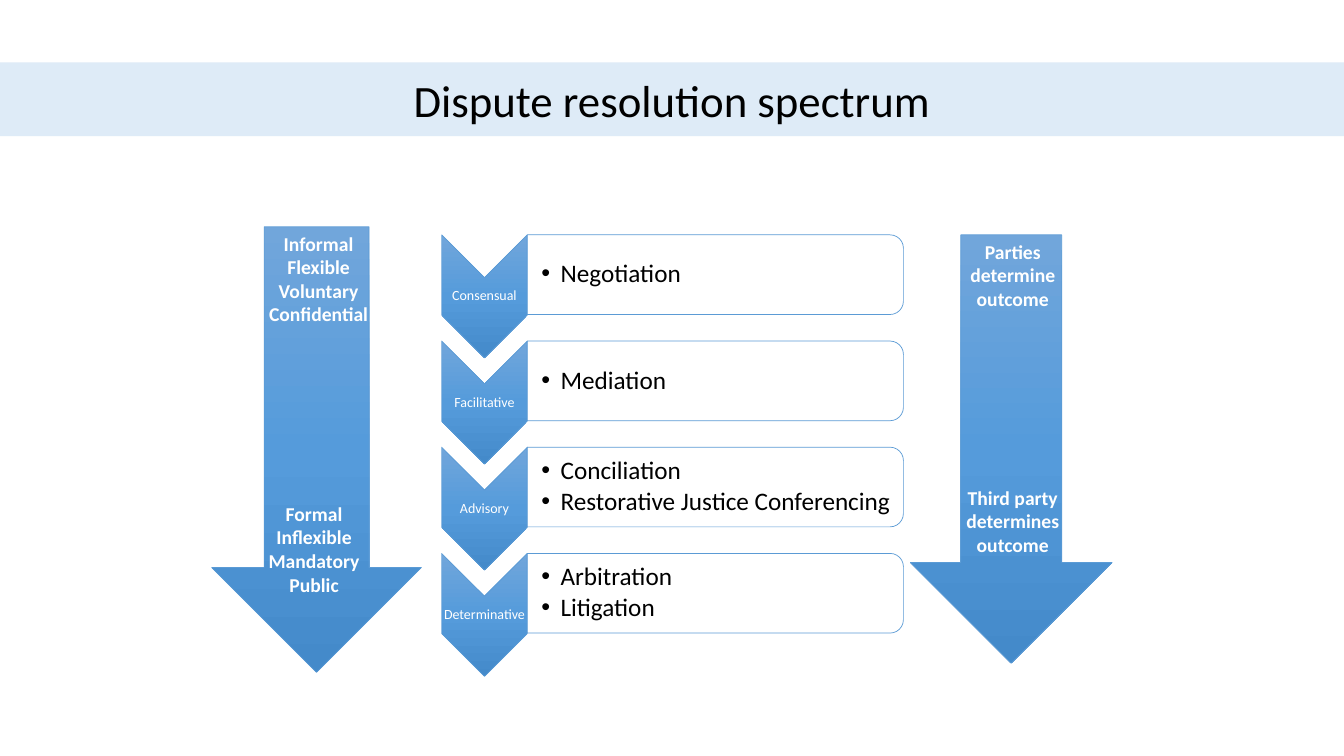
from dataclasses import dataclass

from lxml import etree
from pptx import Presentation
from pptx.dml.color import RGBColor
from pptx.enum.shapes import MSO_SHAPE as Preset
from pptx.enum.text import MSO_ANCHOR as Anchor, PP_ALIGN as Align
from pptx.oxml import parse_xml
from pptx.oxml.ns import nsdecls, qn
from pptx.util import Inches, Pt


@dataclass(frozen=True)
class Theme:
    font: str = "Calibri"
    black: str = "000000"
    white: str = "FFFFFF"
    band: str = "DEEBF7"
    edge: str = "5B9BD5"
    gradient: tuple = ((0, "71A6DB"), (50, "559BDB"), (100, "448ACA"))
    title: int = 32
    item: int = 18
    caption: int = 14
    stage: int = 10
    edge_width: float = 0.5


THEME = Theme()
STAGES = [
    ("Consensual", ["Negotiation"]),
    ("Facilitative", ["Mediation"]),
    ("Advisory", ["Conciliation", "Restorative Justice Conferencing"]),
    ("Determinative", ["Arbitration", "Litigation"]),
]
ARROWS = [
    ((2.1, 2.25, 2.08, 4.42), [
        ((0.39, 0, 1.34, 1.04), ["Informal", "Flexible", "Voluntary", "Confidential"]),
        ((0.39, 2.68, 1.25, 1.04), ["Formal", "Inflexible", "Mandatory", "Public"]),
    ]),
    ((9.03, 2.33, 2, 4.25), [
        ((0.39, 0, 1.25, 0.81), ["Parties determine outcome"]),
        ((0.39, 2.44, 1.25, 0.81), ["Third party determines outcome"]),
    ]),
]


def add_preset(shapes, preset, box, fill=None, edge=None):
    shape = shapes.add_shape(preset, *map(Inches, box))
    shape.shadow.inherit = False
    if fill:
        shape.fill.solid()
        shape.fill.fore_color.rgb = RGBColor.from_string(fill)
    if edge:
        shape.line.color.rgb = RGBColor.from_string(edge)
        shape.line.width = Pt(THEME.edge_width)
    else:
        shape.line.fill.background()
    return shape


def add_turned(shapes, preset, box, fill=None):
    left, top, width, height = box
    shift = (width - height) / 2
    turned = (left + shift, top - shift, height, width)
    shape = add_preset(shapes, preset, turned, fill, THEME.edge)
    shape.rotation = 90
    return shape


def shade(shape):
    stops = "".join(
        f'<a:gs pos="{place * 1000}"><a:srgbClr val="{color}"/></a:gs>'
        for place, color in THEME.gradient)
    shape.fill.background()
    empty = shape._element.spPr.find(qn("a:noFill"))
    empty.getparent().replace(empty, parse_xml(
        f'<a:gradFill {nsdecls("a")} rotWithShape="0"><a:gsLst>{stops}</a:gsLst>'
        '<a:lin ang="5400000" scaled="0"/></a:gradFill>'))


def write(shape, lines, size, color, align=Align.CENTER, bold=False,
          anchor=Anchor.TOP, insets=None, spacing=None, after=None, bullet=False):
    frame = shape.text_frame
    frame.word_wrap = True
    frame.vertical_anchor = anchor
    if insets:
        (frame.margin_left, frame.margin_top,
         frame.margin_right, frame.margin_bottom) = map(Inches, insets)
    for index, line in enumerate(lines):
        para = frame.add_paragraph() if index else frame.paragraphs[0]
        para.alignment = align
        if spacing:
            para.line_spacing = spacing
            para.space_after = Pt(after)
        if bullet:
            props = para._p.get_or_add_pPr()
            props.set("marL", str(Inches(0.19)))
            props.set("indent", str(-Inches(0.19)))
            etree.SubElement(props, qn("a:buFont"), typeface="Arial")
            etree.SubElement(props, qn("a:buChar"), char="•")
        span = para.add_run()
        span.text = line
        span.font.name = THEME.font
        span.font.size = Pt(size)
        span.font.bold = bold
        span.font.color.rgb = RGBColor.from_string(color)


def add_title(page, box):
    band = add_preset(page.shapes, Preset.RECTANGLE, box, THEME.band)
    write(band, ["Dispute resolution spectrum"], THEME.title, THEME.black,
          anchor=Anchor.MIDDLE)


def add_stage(shapes, box, name, methods):
    left, top, width, height = box
    tab, panel = 0.85, 0.79
    chevron = add_turned(shapes, Preset.CHEVRON, (left, top, tab, height))
    shade(chevron)
    label = shapes.add_textbox(*map(Inches, (left, top + 0.43, tab, 0.36)))
    write(label, [name], THEME.stage, THEME.white, anchor=Anchor.MIDDLE,
          insets=(0.01,) * 4, spacing=0.9, after=3.5)

    body = add_turned(shapes, Preset.ROUND_2_SAME_RECTANGLE,
                      (left + tab, top, width - tab, panel), THEME.white)
    color = body._element.spPr.find(qn("a:solidFill"))[0]
    etree.SubElement(color, qn("a:alpha"), val="90000")
    text = shapes.add_textbox(*map(Inches, (
        left + tab, top + 0.04, width - tab - 0.04, panel - 0.08)))
    write(text, methods, THEME.item, THEME.black, Align.LEFT,
          anchor=Anchor.MIDDLE, insets=(0.14, 0.01, 0.01, 0.01),
          spacing=0.9, after=2.7, bullet=True)


def add_spectrum(page, box):
    left, top, width, height = box
    stage_height = 1.22
    step = (height - stage_height) / (len(STAGES) - 1)
    group = page.shapes.add_group_shape()
    for index, (name, methods) in enumerate(STAGES):
        add_stage(group.shapes, (left, top + index * step, width, stage_height),
                  name, methods)


def add_arrow(page, box, captions):
    left, top = box[:2]
    arrow = add_preset(page.shapes, Preset.DOWN_ARROW, box, edge=THEME.edge)
    shade(arrow)
    for (across, down, width, height), lines in captions:
        caption = page.shapes.add_textbox(
            *map(Inches, (left + across, top + down, width, height)))
        write(caption, lines, THEME.caption, THEME.white, bold=True)


def main():
    deck = Presentation()
    deck.slide_width, deck.slide_height = Inches(13.33), Inches(7.5)
    page = deck.slides.add_slide(deck.slide_layouts[6])
    add_title(page, (0, 0.62, 13.33, 0.73))
    add_spectrum(page, (4.38, 2.33, 4.58, 4.38))
    for box, captions in ARROWS:
        add_arrow(page, box, captions)
    deck.save("out.pptx")


if __name__ == "__main__":
    main()
